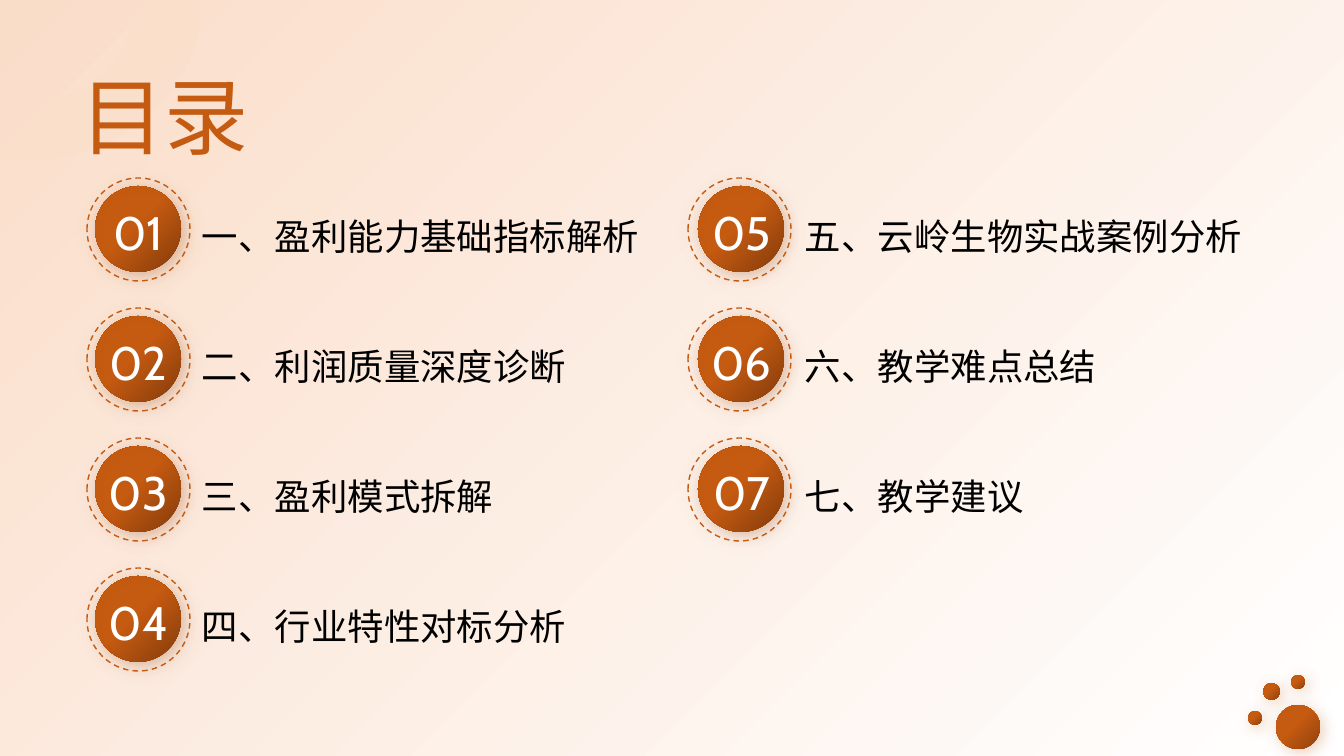
"""Build the table-of-contents slide with seven numbered topics."""
import math

from lxml import etree
from pptx import Presentation
from pptx import util as u
from pptx.dml.color import RGBColor
from pptx.enum import dml, shapes, text
from pptx.oxml.ns import qn

TITLE = "目录"
TOPICS = [
    "一、盈利能力基础指标解析",
    "二、利润质量深度诊断",
    "三、盈利模式拆解",
    "四、行业特性对标分析",
    "五、云岭生物实战案例分析",
    "六、教学难点总结",
    "七、教学建议",
]
CORNER_DOTS = [(1276, 705, 44), (1248, 711, 14), (1263, 683, 17), (1291, 675, 14)]

FONT = "Cabin"
ORANGE = RGBColor(0xC5, 0x5A, 0x11)
BROWN = RGBColor(0x83, 0x3C, 0x0B)
SHADOW_BROWN = RGBColor(0x94, 0x43, 0x0D)
PEACH = RGBColor(0xFA, 0xDD, 0xC9)
WHITE = RGBColor(0xFF, 0xFF, 0xFF)
BLACK = RGBColor(0, 0, 0)

ROWS = 4
ROW_PITCH, COLUMN_PITCH, RING_PITCH = 130, 603, 601
DOT_ROTATION = 132.6


def px(length):
    return u.Emu(round(length * 914400 / 100.8))


def box(*lengths):
    return [px(length) for length in lengths]


def set_gradient(fill, stops):
    fill.gradient()
    for stop, (position, color) in zip(fill.gradient_stops, stops):
        stop.position = position
        stop.color.rgb = color


def add_shadow(shape, color, blur, distance):
    shape.shadow.inherit = False
    effects = shape.element.spPr.find(qn("a:effectLst"))
    outer = etree.SubElement(effects, qn("a:outerShdw"), blurRad=str(u.Pt(blur)),
                             dist=str(u.Pt(distance)), dir="2700000",
                             algn="tl", rotWithShape="0")
    rgb = etree.SubElement(outer, qn("a:srgbClr"), val=str(color))
    etree.SubElement(rgb, qn("a:alpha"), val="30000")


def add_circle(slide, left, top, size):
    return slide.shapes.add_shape(shapes.MSO_SHAPE.OVAL, *box(left, top, size, size))


def add_disc(slide, left, top, size, dark_from=1.0):
    disc = add_circle(slide, left, top, size)
    set_gradient(disc.fill, [(0.46, ORANGE), (dark_from, BROWN)])
    gradient = disc.element.spPr.find(qn("a:gradFill"))
    radial = etree.Element(qn("a:path"), {"path": "circle"})
    etree.SubElement(radial, qn("a:fillToRect"), r="100000", b="100000")
    gradient.replace(gradient.find(qn("a:lin")), radial)
    disc.line.fill.background()
    return disc


def add_ring(slide, left, top):
    ring = add_circle(slide, left, top, 103)
    ring.fill.background()
    ring.line.color.rgb = ORANGE
    ring.line.width = u.Pt(1)
    ring.line.dash_style = dml.MSO_LINE.DASH
    add_shadow(ring, SHADOW_BROWN, 10.2, 2.8)


def write(shape, words, size, color, spacing, align=text.PP_ALIGN.LEFT,
          anchor=text.MSO_ANCHOR.MIDDLE):
    frame = shape.text_frame
    frame.margin_left = frame.margin_right = frame.margin_top = frame.margin_bottom = 0
    frame.word_wrap = True
    frame.auto_size = text.MSO_AUTO_SIZE.NONE
    frame.vertical_anchor = anchor
    paragraph = frame.paragraphs[0]
    paragraph.text = words
    paragraph.alignment = align
    paragraph.line_spacing = spacing
    paragraph.font.name = FONT
    paragraph.font.size = u.Pt(size)
    paragraph.font.color.rgb = color


def add_corner_arc(slide):
    def arc(radius_x, radius_y, end):
        return [(25 + radius_x * math.cos(math.radians(angle)),
                 5 + radius_y * math.sin(math.radians(angle)))
                for angle in range(0, end + 1, 2)]

    outer, inner = arc(176, 155, 98), arc(110, 97, 102)
    outline = [(200, 0), *outer, (0, 158), (0, 99), *reversed(inner)]
    builder = slide.shapes.build_freeform(px(135), 0)
    builder.add_line_segments([box(*point) for point in outline])
    shape = builder.convert_to_shape()
    shape.shadow.inherit = False
    shape.line.fill.background()
    shape.fill.solid()
    shape.fill.fore_color.rgb = PEACH
    rgb = shape.element.spPr.find(qn("a:solidFill"))[0]
    etree.SubElement(rgb, qn("a:alpha"), val="30000")


def add_topic(slide, index, topic):
    column, row = divmod(index, ROWS)
    x, y = column * COLUMN_PITCH, row * ROW_PITCH
    label = slide.shapes.add_textbox(*box(202 + x, 178 + y, 471, 103))
    write(label, topic, 26, BLACK, 1.3)
    disc = add_disc(slide, 95 + x, 186 + y, 86)
    add_shadow(disc, SHADOW_BROWN, 10.2, 2.8)
    add_ring(slide, 87 + column * RING_PITCH, 178 + y)
    number = slide.shapes.add_textbox(*box(95 + x, 201 + y, 87, 55))
    write(number, f"{index + 1:02d}", 33.5, WHITE, 1.1, text.PP_ALIGN.CENTER)


def main():
    presentation = Presentation()
    presentation.slide_width, presentation.slide_height = box(1344, 756)
    slide = presentation.slides.add_slide(presentation.slide_layouts[5])
    background = slide.background.fill
    set_gradient(background, [(0, WHITE), (1, PEACH)])
    background.gradient_angle = 135

    add_corner_arc(slide)
    for left, top, size in CORNER_DOTS:
        dot = add_disc(slide, left, top, size, 0.95)
        dot.rotation = DOT_ROTATION
        add_shadow(dot, ORANGE, 11, 3)

    title = slide.shapes.title
    title.left, title.top, title.width, title.height = box(80, 54, 262, 88)
    write(title, TITLE, 60, ORANGE, 1.1, anchor=text.MSO_ANCHOR.TOP)
    title.element.getparent().append(title.element)

    for index, topic in enumerate(TOPICS):
        add_topic(slide, index, topic)
    presentation.save("out.pptx")


if __name__ == "__main__":
    main()
